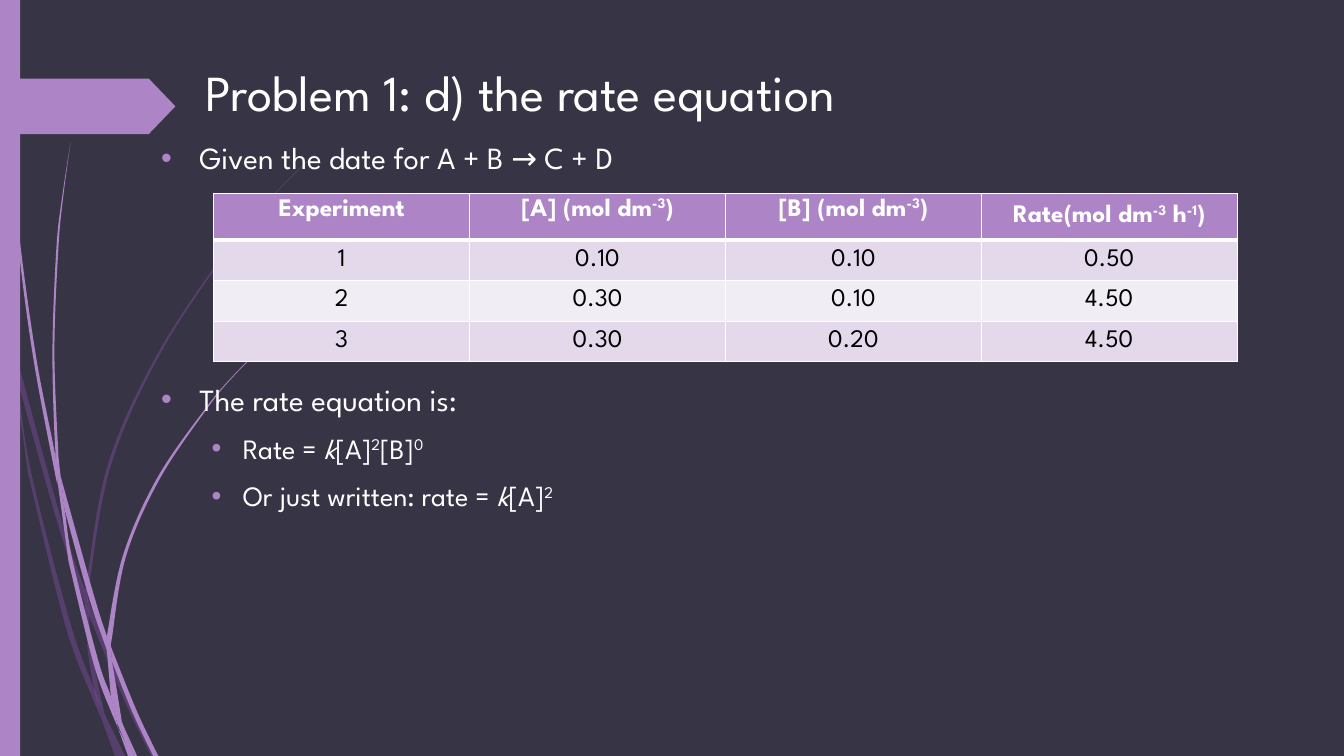
import pptx
import pptx.dml.color
import pptx.enum.shapes
import pptx.enum.text
import pptx.oxml
import pptx.oxml.ns
import pptx.util
from pptx.util import Inches

FONT = "League Spartan"
COLORS = {"background": "373545", "accent": "AD84C6", "shade": "874EA9", "white": "FFFFFF",
          "black": "000000", "odd_row": "E3D9EA", "even_row": "F1EDF5"}
ANCHOR = pptx.enum.text.MSO_ANCHOR
ALIGN = pptx.enum.text.PP_ALIGN
SHAPE = pptx.enum.shapes.MSO_SHAPE

# Each blade of grass is a pair of edges running from top to bottom, in inches.
SHADED_BLADES = [
    ([(0, 2.82), (.09, 3.22), (.11, 3.5)], [(0, 2.99), (.1, 3.44)]),
    ([(.14, 3.45), (.62, 5.2), (.85, 5.86)], [(.17, 3.76), (.58, 5.22), (.84, 5.99)]),
    ([(.88, 5.96), (.92, 6.07), (1.27, 6.92), (1.55, 7.5)], [(.88, 6.1), (1.23, 6.94), (1.5, 7.5)]),
    ([(1.05, 7.11), (1.24, 7.5)], [(1.19, 7.5)]),
    ([(.11, 3.5), (.17, 3.76), (.31, 4.69), (.7, 6.19), (.93, 6.83), (.99, 7.07), (1.01, 7.14)],
     [(.28, 4.7), (.65, 6.21), (.92, 6.93)]),
    ([(.84, 5.99), (.88, 6.08), (.91, 6.46), (1.03, 7.06), (1.05, 7.11)],
     [(.87, 6.46), (.93, 6.83), (.96, 6.92)]),
    ([(3.12, 1.53), (2.89, 1.75), (2.68, 1.97), (2.28, 2.44), (1.58, 3.48), (1.07, 4.61),
      (.85, 5.84), (.85, 5.86)],
     [(3.12, 1.54), (2.9, 1.75), (2.68, 1.98), (2.29, 2.45), (1.6, 3.49), (1.1, 4.62),
      (.88, 5.84), (.88, 5.96)]),
    ([(1.01, 7.14), (1.19, 7.5)], [(1.14, 7.5)]),
    ([(.85, 5.86), (.88, 5.96), (.88, 6.1)], [(.84, 5.99), (.88, 6.08)]),
    ([(.93, 6.83), (1.05, 7.11), (1.19, 7.5)], [(.99, 7.07), (1.01, 7.14)]),
]
BRIGHT_BLADES = [
    ([(.04, 0), (.05, .48), (.08, 1.09), (.19, 2.32), (.36, 3.55), (.55, 4.53), (.57, 4.81)],
     [(.03, 0), (.04, .48), (.07, 1.1), (.17, 2.33), (.33, 3.55), (.56, 4.77)]),
    ([(.6, 4.72), (.93, 5.9), (1.06, 6.31)], [(.64, 5.05), (.88, 5.92), (1.06, 6.45)]),
    ([(1.1, 6.41), (1.13, 6.49), (1.36, 7.06), (1.57, 7.5)],
     [(1.11, 6.56), (1.32, 7.08), (1.52, 7.5)]),
    ([(.57, 4.77), (.64, 5.05), (.72, 5.56), (.98, 6.57), (1.1, 6.91), (1.17, 7.22)],
     [(.68, 5.57), (.93, 6.59), (1.11, 7.08)]),
    ([(.7, 1.41), (.62, 1.93), (.56, 2.45), (.52, 3.49), (.55, 4.49), (.6, 4.72)],
     [(.7, 1.41), (.63, 1.93), (.58, 2.45), (.54, 3.49), (.58, 4.53)]),
    ([(1.22, 7.19), (1.36, 7.5)], [(1.33, 7.5)]),
    ([(.55, 4.49), (.6, 4.72), (.64, 5.05)], [(.55, 4.53), (.57, 4.77)]),
    ([(2.6, 3.44), (2.31, 3.73), (2.04, 4.05), (1.56, 4.74), (1.22, 5.51), (1.06, 6.31)],
     [(2.61, 3.44), (2.31, 3.74), (2.05, 4.06), (1.58, 4.76), (1.25, 5.52), (1.11, 6.33),
      (1.1, 6.41)]),
    ([(1.17, 7.22), (1.31, 7.5)], [(1.27, 7.5)]),
    ([(1.06, 6.45), (1.11, 6.56), (1.21, 7.16), (1.22, 7.19)], [(1.1, 6.91), (1.16, 7.06)]),
    ([(1.06, 6.31), (1.1, 6.41), (1.11, 6.56)], [(1.06, 6.45), (1.09, 6.51)]),
    ([(1.1, 6.91), (1.22, 7.19), (1.33, 7.5)], [(1.16, 7.17), (1.3, 7.5)]),
]

TABLE_ROWS = [
    ["Experiment", "[A] (mol dm|^-3|)", "[B] (mol dm|^-3|)", "Rate(mol dm|^-3| h|^-1|)"],
    ["1", "0.10", "0.10", "0.50"],
    ["2", "0.30", "0.10", "4.50"],
    ["3", "0.30", "0.20", "4.50"],
]
# Text, level and space before in points; the second gap leaves room for the table.
BULLETS = [
    ("Given the date for A + B → C + D", 0, 10),
    ("The rate equation is:", 0, 146),
    ("Rate = |_k|[A]|^2|[B]|^0", 1, 10),
    ("Or just written: rate = |_k|[A]|^2", 1, 10),
]


def color(name):
    return pptx.dml.color.RGBColor.from_string(COLORS[name])


def xml(markup):
    return pptx.oxml.parse_xml(markup.replace(" ", f' {pptx.oxml.ns.nsdecls("a")} ', 1))


def write(paragraph, text, size, fill="white", bold=False, align=ALIGN.LEFT):
    """Split text at | into runs; ^ marks a superscript run and _ an italic one."""
    paragraph.alignment = align
    for piece in text.split("|"):
        run = paragraph.add_run()
        run.text = piece.lstrip("^_")
        font = run.font
        font.name, font.size, font.bold = FONT, pptx.util.Pt(size), bold
        font.italic = piece.startswith("_")
        font.color.rgb = color(fill)
        if piece.startswith("^"):
            font._element.set("baseline", "30000")


def paint(shape, name, alpha=None):
    shape.shadow.inherit = False
    shape.fill.solid()
    shape.fill.fore_color.rgb = color(name)
    shape.line.fill.background()
    if alpha:
        rgb = shape._element.spPr.find(".//" + pptx.oxml.ns.qn("a:srgbClr"))
        rgb.append(xml(f'<a:alpha val="{alpha * 1000}"/>'))


def bend(shape, corner):
    """Turn the straight sides into smooth curves, except the one that ends at the corner."""
    geometry = shape._element.spPr
    nodes = [(int(p.get("x")), int(p.get("y"))) for p in geometry.iter(pptx.oxml.ns.qn("a:pt"))]
    sides = list(geometry.iter(pptx.oxml.ns.qn("a:lnTo")))
    for end, side in enumerate(sides, 1):
        if end == corner:
            continue
        first, last = (0, corner - 1) if end < corner else (corner, len(nodes) - 1)
        before, start = nodes[max(end - 2, first)], nodes[end - 1]
        stop, after = nodes[end], nodes[min(end + 1, last)]
        leave = [b + (c - a) // 6 for a, b, c in zip(before, start, stop)]
        arrive = [b - (c - a) // 6 for a, b, c in zip(start, stop, after)]
        points = "".join(f'<a:pt x="{x}" y="{y}"/>' for x, y in (leave, arrive, stop))
        side.getparent().replace(side, xml(f'<a:cubicBezTo >{points}</a:cubicBezTo>'))


def add_blade(slide, edges, name, alpha=None):
    first, second = edges
    outline = [(Inches(x), Inches(y)) for x, y in first + second[::-1]]
    builder = slide.shapes.build_freeform(*outline[0])
    builder.add_line_segments(outline[1:], close=True)
    shape = builder.convert_to_shape()
    bend(shape, len(first))
    paint(shape, name, alpha)


def add_decoration(slide, height):
    for edges in SHADED_BLADES:
        add_blade(slide, edges, "shade", 40)
    for edges in BRIGHT_BLADES:
        add_blade(slide, edges, "accent")
    side_bar = slide.shapes.add_shape(SHAPE.RECTANGLE, 0, 0, Inches(0.2), height)
    paint(side_bar, "accent")
    title_tag = slide.shapes.add_shape(SHAPE.PENTAGON, 0, Inches(0.78), Inches(1.74), Inches(0.55))
    title_tag.adjustments[0] = 0.48
    paint(title_tag, "accent")


def add_title(slide, text, left, top, width, height):
    title = slide.shapes.title
    title.left, title.top, title.width, title.height = left, top, width, height
    frame = title.text_frame
    frame.vertical_anchor = ANCHOR.TOP
    frame.auto_size = pptx.enum.text.MSO_AUTO_SIZE.NONE
    write(frame.paragraphs[0], text, 36)


def add_bullets(slide, left, top, width, height):
    frame = slide.shapes.add_textbox(left, top, width, height).text_frame
    frame.word_wrap = True
    for index, (text, level, space) in enumerate(BULLETS):
        paragraph = frame.add_paragraph() if index else frame.paragraphs[0]
        write(paragraph, text, (22, 20)[level])
        paragraph.level = level
        paragraph.space_before = pptx.util.Pt(space)
        margin, hanging = ((0.38, 0.38), (0.81, 0.31))[level]
        properties = paragraph._p.get_or_add_pPr()
        properties.set("marL", str(Inches(margin)))
        properties.set("indent", str(-Inches(hanging)))
        properties.append(xml(f'<a:buClr ><a:srgbClr val="{COLORS["accent"]}"/></a:buClr>'))
        properties.append(xml('<a:buFont typeface="Arial"/>'))
        properties.append(xml('<a:buChar char="•"/>'))


def add_borders(cell, bottom):
    properties = cell._tc.get_or_add_tcPr()
    for side, points in (("L", 1), ("R", 1), ("T", 1), ("B", bottom)):
        properties.append(xml(
            f'<a:ln{side} w="{pptx.util.Pt(points)}"><a:solidFill>'
            f'<a:srgbClr val="{COLORS["white"]}"/></a:solidFill></a:ln{side}>'))


def add_rate_table(slide, left, top, width, height):
    rows, columns = len(TABLE_ROWS), len(TABLE_ROWS[0])
    table = slide.shapes.add_table(rows, columns, left, top, width, height).table
    for index, texts in enumerate(TABLE_ROWS):
        header = index == 0
        table.rows[index].height = Inches(0.46) if header else (height - Inches(0.46)) // (rows - 1)
        fill = "accent" if header else ("even_row", "odd_row")[index % 2]
        for column, text in enumerate(texts):
            cell = table.cell(index, column)
            add_borders(cell, 3 if header else 1)
            cell.fill.solid()
            cell.fill.fore_color.rgb = color(fill)
            top_anchored = header and column < columns - 1
            cell.vertical_anchor = ANCHOR.TOP if top_anchored else ANCHOR.MIDDLE
            write(cell.text_frame.paragraphs[0], text, 18, "white" if header else "black",
                  bold=header, align=ALIGN.CENTER)


def main():
    presentation = pptx.Presentation()
    presentation.slide_width, presentation.slide_height = Inches(13.33), Inches(7.5)
    slide = presentation.slides.add_slide(presentation.slide_layouts[5])
    slide.background.fill.solid()
    slide.background.fill.fore_color.rgb = color("background")
    add_decoration(slide, presentation.slide_height)
    add_title(slide, "Problem 1: d) the rate equation",
              Inches(1.94), Inches(0.56), Inches(11.26), Inches(1.23))
    add_bullets(slide, Inches(1.5), Inches(1.33), Inches(11.25), Inches(6.06))
    add_rate_table(slide, Inches(2.12), Inches(1.92), Inches(10.15), Inches(1.67))
    presentation.save("out.pptx")


if __name__ == "__main__":
    main()
